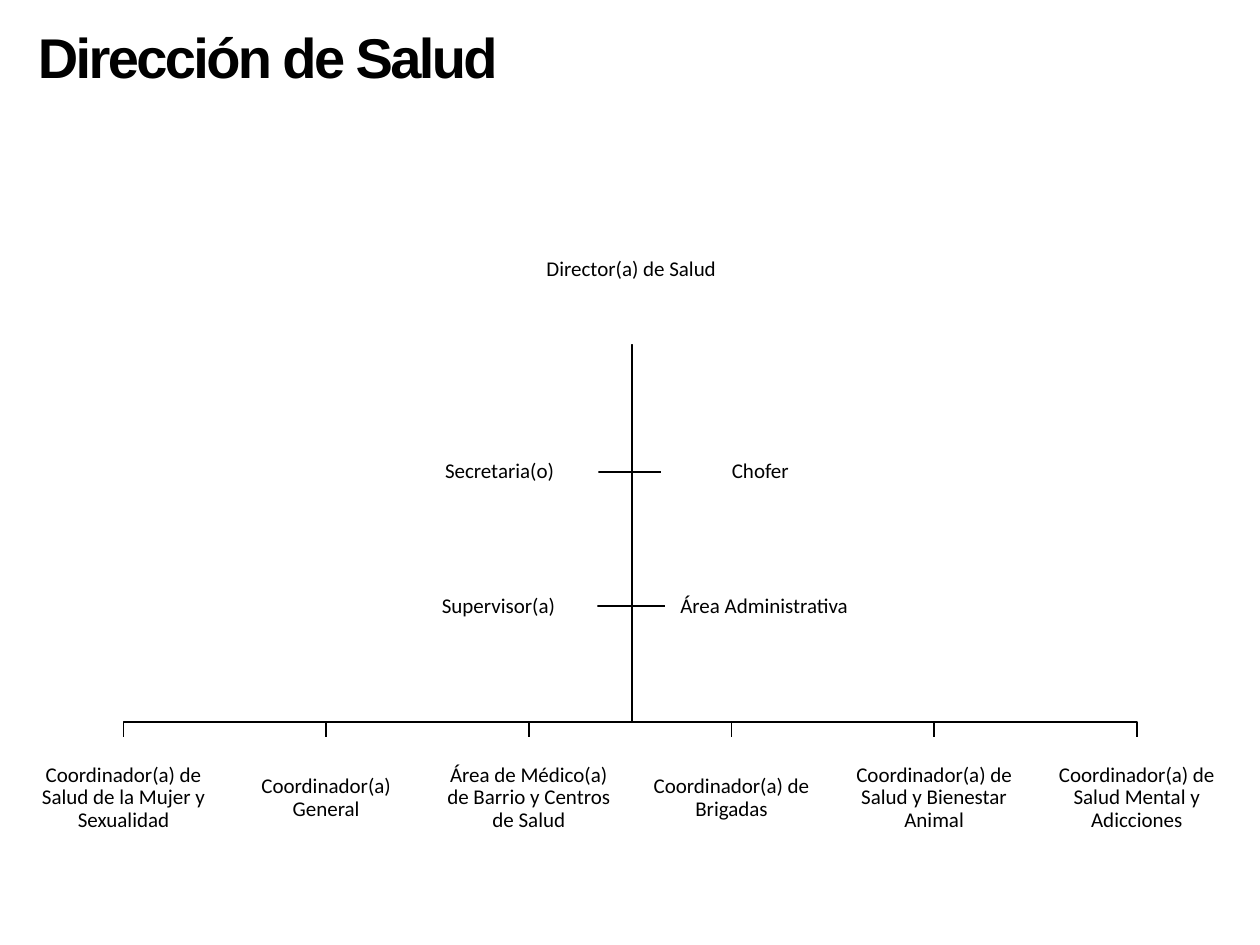
from dataclasses import dataclass

from pptx import Presentation
from pptx.dml.color import RGBColor
from pptx.enum.shapes import MSO_SHAPE
from pptx.enum.text import MSO_ANCHOR, MSO_AUTO_SIZE, PP_ALIGN
from pptx.util import Pt

RECT = MSO_SHAPE.RECTANGLE
TOP, MIDDLE = MSO_ANCHOR.TOP, MSO_ANCHOR.MIDDLE
LEFT, CENTER = PP_ALIGN.LEFT, PP_ALIGN.CENTER
GROW = MSO_AUTO_SIZE.SHAPE_TO_FIT_TEXT


@dataclass(frozen=True)
class Theme:
    """Colours, fonts and sizes of the chart."""
    ink: RGBColor = RGBColor(0, 0, 0)
    paper: RGBColor = RGBColor(255, 255, 255)
    head: str = "Arial"
    body: str = "Calibri"
    big: int = 32
    small: int = 12
    line: int = 1


THEME = Theme()
AXIS, BASE, BUS = 361, 196.6, 412.6
ROOT = ("Director(a) de Salud", 261.4, 111.6, 198.7, 85)
SIDE_W, SIDE_H = 113, 56.9
SIDES = [
    ("Secretaria(o)", 229, 241.2),
    ("Chofer", 378, 241.2),
    ("Supervisor(a)", 228.4, 318),
    ("Área Administrativa", 380.2, 318),
]
TEAM_X, TEAM_Y, STEP, TEAM_W, TEAM_H = 70.6, 421.2, 115.8, 98, 69.8
TEAMS = [
    "Coordinador(a) de Salud de la Mujer y Sexualidad",
    "Coordinador(a) General",
    "Área de Médico(a) de Barrio y Centros de Salud",
    "Coordinador(a) de Brigadas",
    "Coordinador(a) de Salud y Bienestar Animal",
    "Coordinador(a) de Salud Mental y Adicciones",
]


def apply(item, values):
    """Set each attribute named in a dict."""
    for name, value in values.items():
        setattr(item, name, value)


def add_title(slide, text):
    """Place and format the title."""
    title = slide.shapes.title
    apply(title, {"left": Pt(14.4), "top": Pt(9.4),
                  "width": Pt(550), "height": Pt(46)})
    frame = title.text_frame
    frame.text = text
    apply(frame, {"vertical_anchor": TOP, "word_wrap": True, "auto_size": GROW})
    para = frame.paragraphs[0]
    para.alignment = LEFT
    run = para.runs[0]
    apply(run.font, {"name": THEME.head, "size": Pt(THEME.big), "bold": True})
    run.font.color.rgb = THEME.ink
    run._r.get_or_add_rPr().set("spc", "-150")


def add_link(slide, *spots):
    """Draw a bent line from the root through the given spots."""
    build = slide.shapes.build_freeform(Pt(AXIS), Pt(BASE))
    build.add_line_segments([(Pt(x), Pt(y)) for x, y in spots], close=False)
    link = build.convert_to_shape()
    link.shadow.inherit = False
    link.fill.background()
    link.line.color.rgb = THEME.ink
    link.line.width = Pt(THEME.line)


def add_post(slide, text, left, top, width, height):
    """Add a box with the name of a post."""
    post = slide.shapes.add_shape(RECT, Pt(left), Pt(top), Pt(width), Pt(height))
    post.shadow.inherit = False
    post.fill.solid()
    post.fill.fore_color.rgb = THEME.paper
    post.line.fill.background()
    frame = post.text_frame
    frame.text = text
    apply(frame, {"word_wrap": True, "vertical_anchor": MIDDLE})
    apply(frame, {f"margin_{side}": Pt(0.7)
                  for side in ("left", "right", "top", "bottom")})
    para = frame.paragraphs[0]
    apply(para, {"alignment": CENTER, "line_spacing": 0.9})
    font = para.runs[0].font
    apply(font, {"name": THEME.body, "size": Pt(THEME.small)})
    font.color.rgb = THEME.ink


def main():
    """Build the chart and save it."""
    deck = Presentation()
    apply(deck, {"slide_width": Pt(720), "slide_height": Pt(540)})
    slide = deck.slides.add_slide(deck.slide_layouts[5])
    add_title(slide, "Dirección de Salud")

    mids = [TEAM_X + STEP * i for i in range(len(TEAMS))]
    for _, left, top in SIDES:
        mid = top + SIDE_H / 2
        edge = left if left > AXIS else left + SIDE_W
        add_link(slide, (AXIS, mid), (edge, mid))
    for mid in mids:
        add_link(slide, (AXIS, BUS), (mid, BUS), (mid, TEAM_Y))

    add_post(slide, *ROOT)
    for text, mid in zip(TEAMS, mids):
        add_post(slide, text, mid - TEAM_W / 2, TEAM_Y, TEAM_W, TEAM_H)
    for text, left, top in SIDES:
        add_post(slide, text, left, top, SIDE_W, SIDE_H)
    deck.save("out.pptx")


if __name__ == "__main__":
    main()
